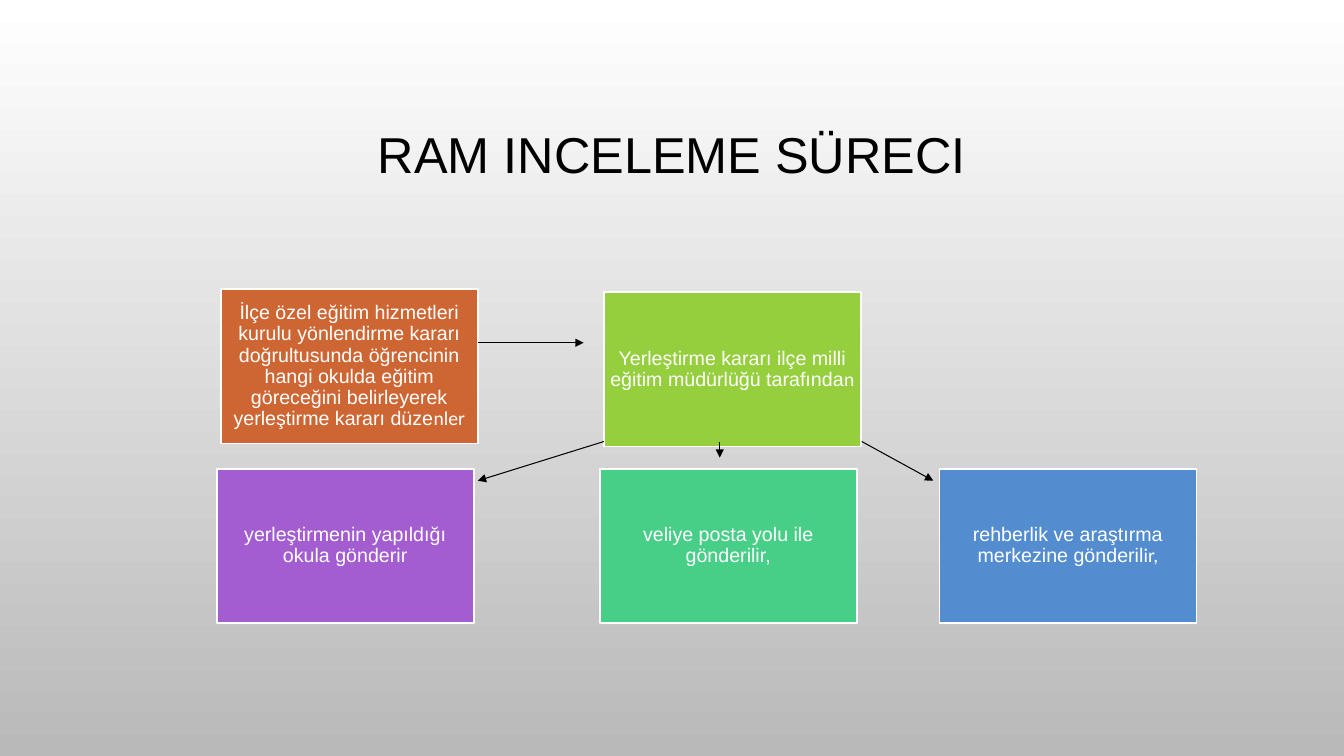
"""Build the slide that shows the RAM review process as a flow of boxes and arrows."""
from dataclasses import dataclass

from lxml.etree import SubElement
from pptx import Presentation
from pptx.dml.color import RGBColor as Rgb
from pptx.enum.shapes import MSO_CONNECTOR as Connector, MSO_SHAPE as Shape
from pptx.enum.text import MSO_ANCHOR as Anchor, PP_ALIGN as Align
from pptx.oxml.ns import qn
from pptx.slide import Slide
from pptx.text.text import TextFrame
from pptx.util import Pt


@dataclass(frozen=True)
class Theme:
    white: Rgb = Rgb.from_string("FFFFFF")
    black: Rgb = Rgb.from_string("000000")
    grey: Rgb = Rgb.from_string("B9B9B9")
    orange: Rgb = Rgb.from_string("CE6633")
    lime: Rgb = Rgb.from_string("95CF3E")
    purple: Rgb = Rgb.from_string("A35DD1")
    green: Rgb = Rgb.from_string("48CF87")
    blue: Rgb = Rgb.from_string("538DD0")
    main_font: str = "Arial"
    end_font: str = "Calibri"
    title_size: float = 36
    box_size: float = 14


@dataclass(frozen=True)
class Step:
    left: float
    top: float
    fill: Rgb
    text: str
    ending: str = ""


@dataclass(frozen=True)
class Arrow:
    start: tuple[float, float]
    end: tuple[float, float]


THEME = Theme()
BOX_WIDTH, BOX_HEIGHT, BOX_INSET = 183.6, 110.2, 4.3
LOWER_TOP = 334.8
ARROW_TOP, ARROW_BOTTOM = 315.4, 343.4

STEPS = (
    Step(157.7, 206.6, THEME.orange,
         "İlçe özel eğitim hizmetleri kurulu yönlendirme kararı doğrultusunda "
         "öğrencinin hangi okulda eğitim göreceğini belirleyerek yerleştirme kararı düze",
         "nler"),
    Step(431.3, 208.8, THEME.lime,
         "Yerleştirme kararı ilçe milli eğitim müdürlüğü tarafında", "n"),
    Step(154.8, LOWER_TOP, THEME.purple, "yerleştirmenin yapıldığı okula gönderir"),
    Step(428.4, LOWER_TOP, THEME.green, "veliye posta yolu ile gönderilir,"),
    Step(671, LOWER_TOP, THEME.blue, "rehberlik ve araştırma merkezine gönderil", "ir,"),
)

ARROWS = (
    Arrow((341.3, 244.8), (416.9, 244.8)),
    Arrow((431.3, ARROW_TOP), (341.3, ARROW_BOTTOM)),
    Arrow((514.1, ARROW_TOP), (514.1, 326.9)),
    Arrow((615.6, ARROW_TOP), (666.7, ARROW_BOTTOM)),
)


def write_text(frame: TextFrame, parts: list[tuple[str, str]], size: float, color: Rgb) -> None:
    frame.word_wrap = True
    frame.vertical_anchor = Anchor.MIDDLE
    paragraph = frame.paragraphs[0]
    paragraph.alignment = Align.CENTER
    paragraph.line_spacing = 0.9
    for text, font_name in parts:
        run = paragraph.add_run()
        run.text = text
        run.font.name = font_name
        run.font.size = Pt(size)
        run.font.color.rgb = color


def paint_background(slide: Slide) -> None:
    fill = slide.background.fill
    fill.gradient()
    fill.gradient_angle = 270
    for stop, position, color in zip(fill.gradient_stops, (0, 1), (THEME.white, THEME.grey)):
        stop.position = position
        stop.color.rgb = color


def add_title(slide: Slide, text: str) -> None:
    title = slide.shapes.title
    title.left, title.top, title.width, title.height = Pt(72), Pt(49), Pt(816), Pt(126)
    write_text(title.text_frame, [(text, THEME.main_font)], THEME.title_size, THEME.black)


def add_step(slide: Slide, step: Step) -> None:
    shape = slide.shapes.add_shape(
        Shape.RECTANGLE, Pt(step.left), Pt(step.top), Pt(BOX_WIDTH), Pt(BOX_HEIGHT))
    shape.shadow.inherit = False
    shape.fill.solid()
    shape.fill.fore_color.rgb = step.fill
    shape.line.color.rgb = THEME.white
    shape.line.width = Pt(1.25)
    frame = shape.text_frame
    frame.margin_left = frame.margin_right = Pt(BOX_INSET)
    frame.margin_top = frame.margin_bottom = Pt(BOX_INSET)
    parts = [(step.text, THEME.main_font)]
    if step.ending:
        parts.append((step.ending, THEME.end_font))
    write_text(frame, parts, THEME.box_size, THEME.white)
    frame.paragraphs[0].space_after = Pt(4.9)


def add_arrow(slide: Slide, arrow: Arrow) -> None:
    connector = slide.shapes.add_connector(
        Connector.STRAIGHT, *(Pt(value) for value in arrow.start + arrow.end))
    connector.line.color.rgb = THEME.black
    connector.line.width = Pt(0.75)
    SubElement(connector.line._get_or_add_ln(), qn("a:tailEnd"), type="triangle")
    SubElement(connector._element.spPr, qn("a:effectLst"))


def main() -> None:
    presentation = Presentation()
    presentation.slide_width, presentation.slide_height = Pt(960), Pt(540)
    slide = presentation.slides.add_slide(presentation.slide_layouts.get_by_name("Title Only"))
    paint_background(slide)
    add_title(slide, "RAM INCELEME SÜRECI")
    for step in STEPS:
        add_step(slide, step)
    for arrow in ARROWS:
        add_arrow(slide, arrow)
    presentation.save("out.pptx")


if __name__ == "__main__":
    main()
